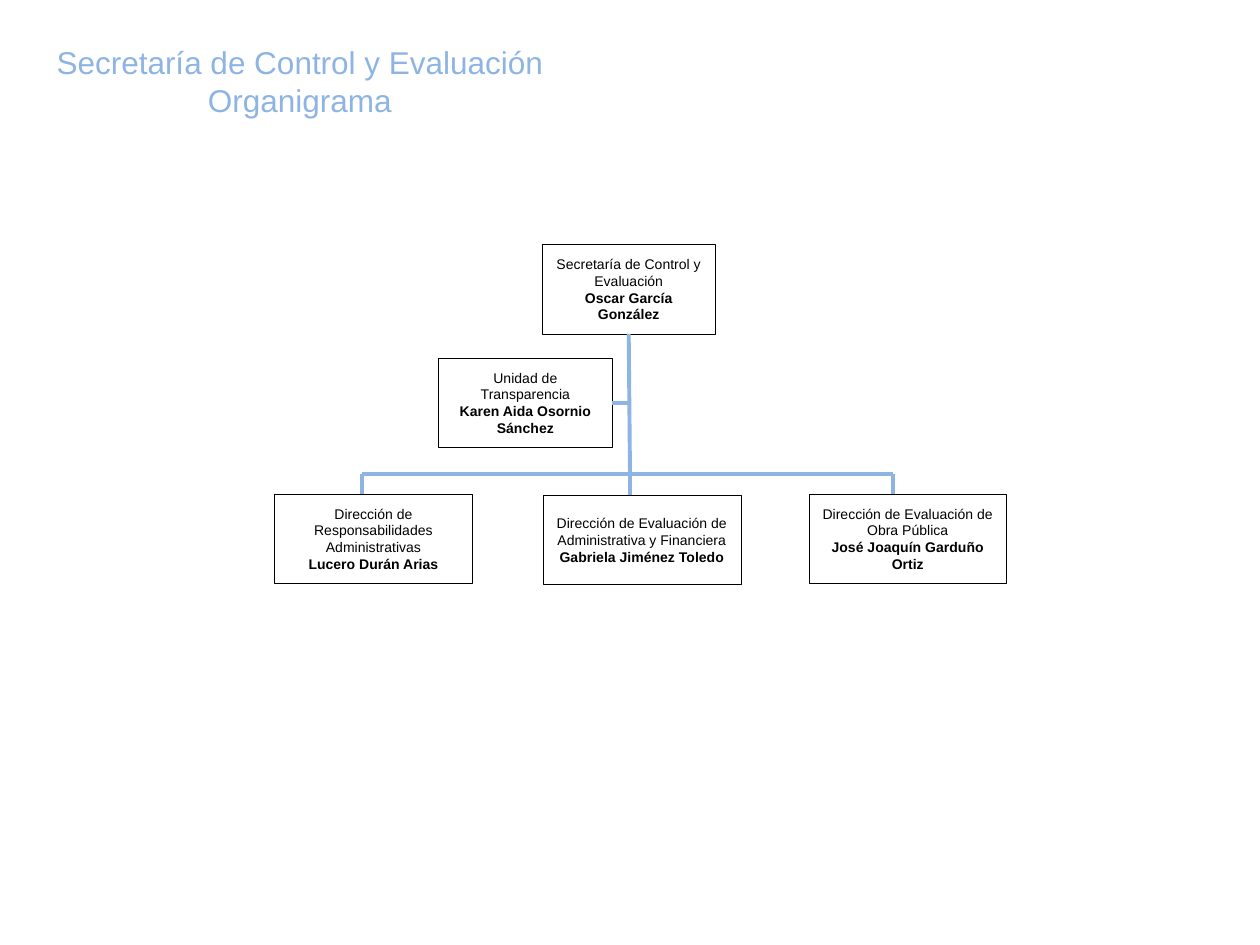
from lxml.etree import SubElement
from pptx import Presentation
from pptx.dml.color import RGBColor
from pptx.enum.shapes import MSO_CONNECTOR as Connector, MSO_SHAPE as Shape
from pptx.enum.text import MSO_ANCHOR as Anchor, PP_ALIGN as Align
from pptx.oxml.ns import qn
from pptx.util import Inches, Pt

COLORS = {"accent": "8EB4E3", "ink": "000000", "paper": "FFFFFF"}
FONT = "Arial"
TITLE = ["Secretaría de Control y Evaluación", "Organigrama"]

BOX_HEIGHT = 0.71
STAFF_WIDTH, DIRECTION_WIDTH = 1.38, 1.57
BUS_Y, TRUNK_X = 3.76, 5

# office, holder, left, top, width
SECRETARY = ("Secretaría de Control y Evaluación", "Oscar García González",
             4.3, 1.94, STAFF_WIDTH)
TRANSPARENCY = ("Unidad de Transparencia", "Karen Aida Osornio Sánchez",
                3.48, 2.84, STAFF_WIDTH)
DIRECTIONS = [
    ("Dirección de Responsabilidades Administrativas", "Lucero Durán Arias",
     2.18, 3.92, DIRECTION_WIDTH),
    ("Dirección de Evaluación de Administrativa y Financiera",
     "Gabriela Jiménez Toledo", 4.31, 3.93, DIRECTION_WIDTH),
    ("Dirección de Evaluación de Obra Pública", "José Joaquín Garduño Ortiz",
     6.42, 3.92, DIRECTION_WIDTH),
]
DROPS = [2.87, TRUNK_X, 7.09]


def color(name):
    return RGBColor.from_string(COLORS[name])


def write(frame, lines, size, ink="ink", bold_last=False, anchor=Anchor.TOP):
    """Fill a text frame with one centred paragraph per line."""
    frame.word_wrap = True
    frame.vertical_anchor = anchor
    for index, line in enumerate(lines):
        para = frame.add_paragraph() if index else frame.paragraphs[0]
        para.alignment = Align.CENTER
        span = para.add_run()
        span.text = line
        span.font.name = FONT
        span.font.size = Pt(size)
        span.font.bold = bold_last and index == len(lines) - 1
        span.font.color.rgb = color(ink)


def add_office(page, office, holder, left, top, width):
    box = page.shapes.add_shape(Shape.RECTANGLE, Inches(left), Inches(top),
                                Inches(width), Inches(BOX_HEIGHT))
    box.shadow.inherit = False
    box.fill.solid()
    box.fill.fore_color.rgb = color("paper")
    box.line.color.rgb = color("ink")
    box.line.width = Pt(0.25)
    write(box.text_frame, [office, holder], 8, bold_last=True,
          anchor=Anchor.MIDDLE)
    return box


def add_link(page, start, end):
    ends = [Inches(value) for value in (*start, *end)]
    link = page.shapes.add_connector(Connector.STRAIGHT, *ends)
    link.line.color.rgb = color("accent")
    link.line.width = Pt(2.25)
    SubElement(link._element.spPr, qn("a:effectLst"))
    return link


def main():
    deck = Presentation()
    deck.slide_width, deck.slide_height = Inches(10), Inches(7.5)
    page = deck.slides.add_slide(deck.slide_layouts[6])

    title = page.shapes.add_textbox(Inches(0.34), Inches(0.29),
                                    Inches(4.08), Inches(0.71))
    write(title.text_frame, TITLE, 18, ink="accent")

    secretary = add_office(page, *SECRETARY)
    transparency = add_office(page, *TRANSPARENCY)
    for direction in DIRECTIONS:
        add_office(page, *direction)

    trunk = add_link(page, (TRUNK_X, BUS_Y), (TRUNK_X, BUS_Y))
    trunk.begin_connect(secretary, 2)

    staff_y = TRANSPARENCY[3] + BOX_HEIGHT / 2
    staff = add_link(page, (TRUNK_X, staff_y), (TRUNK_X, staff_y))
    staff.begin_connect(transparency, 3)

    add_link(page, (DROPS[0], BUS_Y), (DROPS[-1], BUS_Y))
    for drop_x, direction in zip(DROPS, DIRECTIONS):
        add_link(page, (drop_x, BUS_Y), (drop_x, direction[3]))

    deck.save("out.pptx")


if __name__ == "__main__":
    main()
